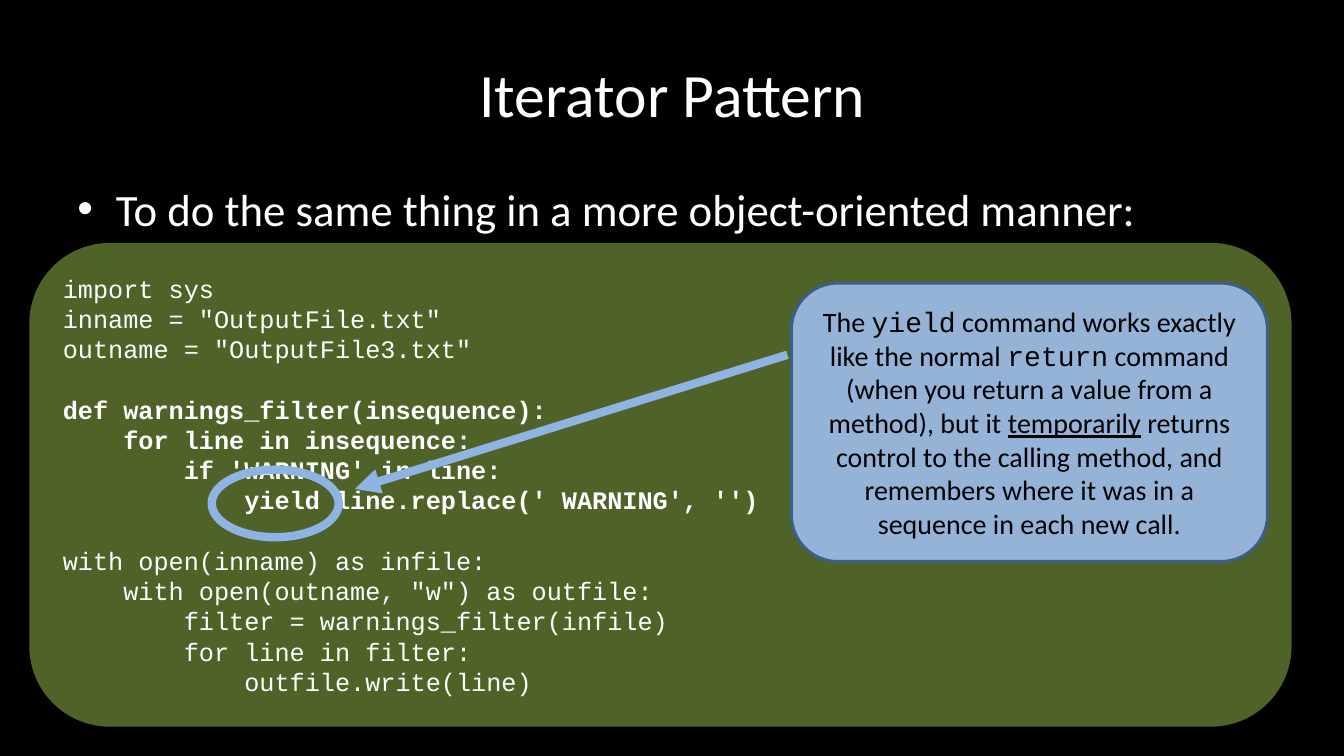
"""Build the Iterator Pattern slide with its code panel and yield callout."""
from lxml import etree
from pptx import Presentation
from pptx.dml.color import RGBColor
from pptx.enum.shapes import MSO_CONNECTOR, MSO_SHAPE
from pptx.enum.text import MSO_ANCHOR, PP_ALIGN
from pptx.oxml.ns import qn
from pptx.util import Inches, Pt

ROUNDED, OVAL = MSO_SHAPE.ROUNDED_RECTANGLE, MSO_SHAPE.OVAL
STRAIGHT = MSO_CONNECTOR.STRAIGHT
TOP, MIDDLE = MSO_ANCHOR.TOP, MSO_ANCHOR.MIDDLE
LEFT, CENTER = PP_ALIGN.LEFT, PP_ALIGN.CENTER

THEME = {
    "background": "000000", "light": "FFFFFF", "dark": "000000",
    "panel": "4F6228", "callout": "95B3D7", "border": "3A5F8C", "accent": "8EB4E3",
    "sans": "Calibri", "mono": "Courier New",
    "title": 44, "bullet": 32, "note": 20, "code": 18,
    "code_line": 21.6, "thin": 2, "thick": 6,
}

TITLE = "Iterator Pattern"
BULLET = "To do the same thing in a more object-oriented manner:"
CODE_BLOCKS = [
    (False, [(0, "import sys"),
             (0, 'inname = "OutputFile.txt"'),
             (0, 'outname = "OutputFile3.txt"')]),
    (True, [(0, "def warnings_filter(insequence):"),
            (1, "for line in insequence:"),
            (2, "if 'WARNING' in line:"),
            (3, "yield line.replace(' WARNING', '')")]),
    (False, [(0, "with open(inname) as infile:"),
             (1, 'with open(outname, "w") as outfile:'),
             (2, "filter = warnings_filter(infile)"),
             (2, "for line in filter:"),
             (3, "outfile.write(line)")]),
]
NOTE = [
    ("The ", "sans", False),
    ("yield", "mono", False),
    (" command works exactly like the normal ", "sans", False),
    ("return", "mono", False),
    (" command (when you return a value from a method), but it ", "sans", False),
    ("temporarily", "sans", True),
    (" returns control to the calling method, and remembers where it was "
     "in a sequence in each new call.", "sans", False),
]

TITLE_BOX = (0.67, 0.3, 12, 1.25)
BULLET_BOX = (0.67, 1.75, 12, 4.95)
PANEL_BOX = (0.29, 2.41, 12.52, 4.8)
YIELD_RING = (2.1, 4.66, 1.26, 0.67)
NOTE_BOX = (7.85, 2.81, 4.72, 2.76)
ARROW = (7.81, 3.52, 3.52, 4.85)
CODE_INDENT = 0.6
BULLET_INDENT = 0.38


def color(role):
    return RGBColor.from_string(THEME[role])


def inches(values):
    return [Inches(value) for value in values]


def set_line(line, role, width):
    line.color.rgb = color(role)
    line.width = Pt(THEME[width])


def add_panel(slide, kind, box, fill=None, border=None, width="thin"):
    panel = slide.shapes.add_shape(kind, *inches(box))
    panel.shadow.inherit = False
    if fill:
        panel.fill.solid()
        panel.fill.fore_color.rgb = color(fill)
    else:
        panel.fill.background()
    if border:
        set_line(panel.line, border, width)
    else:
        panel.line.fill.background()
    return panel


def open_frame(holder, anchor):
    frame = holder.text_frame
    frame.word_wrap = True
    frame.vertical_anchor = anchor
    return frame


def add_run(paragraph, text, size, font, ink, bold=False, underline=False):
    run = paragraph.add_run()
    run.text = text
    run.font.size = Pt(THEME[size])
    run.font.name = THEME[font]
    run.font.color.rgb = color(ink)
    run.font.bold = bold
    run.font.underline = underline


def add_heading(slide, box, text, size, anchor, align):
    frame = open_frame(slide.shapes.add_textbox(*inches(box)), anchor)
    paragraph = frame.paragraphs[0]
    paragraph.alignment = align
    add_run(paragraph, text, size, "sans", "light")
    return paragraph


def set_indent(paragraph, margin, hanging=0):
    properties = paragraph._p.get_or_add_pPr()
    properties.set("marL", str(Inches(margin)))
    properties.set("indent", str(-Inches(hanging)))
    return properties


def add_code(slide):
    frame = open_frame(add_panel(slide, ROUNDED, PANEL_BOX, "panel"), MIDDLE)
    paragraph = frame.paragraphs[0]
    for block_number, (bold, lines) in enumerate(CODE_BLOCKS):
        for line_number, (depth, text) in enumerate(lines):
            if block_number or line_number:
                paragraph = frame.add_paragraph()
            if block_number and not line_number:
                paragraph.space_before = Pt(THEME["code_line"])
            paragraph.alignment = LEFT
            set_indent(paragraph, depth * CODE_INDENT)
            add_run(paragraph, text, "code", "mono", "light", bold)


def add_bullet(slide):
    paragraph = add_heading(slide, BULLET_BOX, BULLET, "bullet", TOP, LEFT)
    properties = set_indent(paragraph, BULLET_INDENT, BULLET_INDENT)
    etree.SubElement(properties, qn("a:buFont"), typeface="Arial")
    etree.SubElement(properties, qn("a:buChar"), char="•")


def add_note(slide):
    callout = add_panel(slide, ROUNDED, NOTE_BOX, "callout", "border")
    paragraph = open_frame(callout, MIDDLE).paragraphs[0]
    paragraph.alignment = CENTER
    for text, font, underline in NOTE:
        add_run(paragraph, text, "note", font, "dark", underline=underline)


def add_arrow(slide):
    arrow = slide.shapes.add_connector(STRAIGHT, *inches(ARROW))
    set_line(arrow.line, "accent", "thick")
    etree.SubElement(arrow.line._get_or_add_ln(), qn("a:tailEnd"), type="triangle")
    etree.SubElement(arrow._element.spPr, qn("a:effectLst"))


def main():
    deck = Presentation()
    deck.slide_width, deck.slide_height = inches((13.33, 7.5))
    slide = deck.slides.add_slide(deck.slide_layouts[6])
    slide.background.fill.solid()
    slide.background.fill.fore_color.rgb = color("background")
    add_heading(slide, TITLE_BOX, TITLE, "title", MIDDLE, CENTER)
    add_code(slide)
    add_bullet(slide)
    add_panel(slide, OVAL, YIELD_RING, border="accent", width="thick")
    add_note(slide)
    add_arrow(slide)
    deck.save("out.pptx")


if __name__ == "__main__":
    main()
